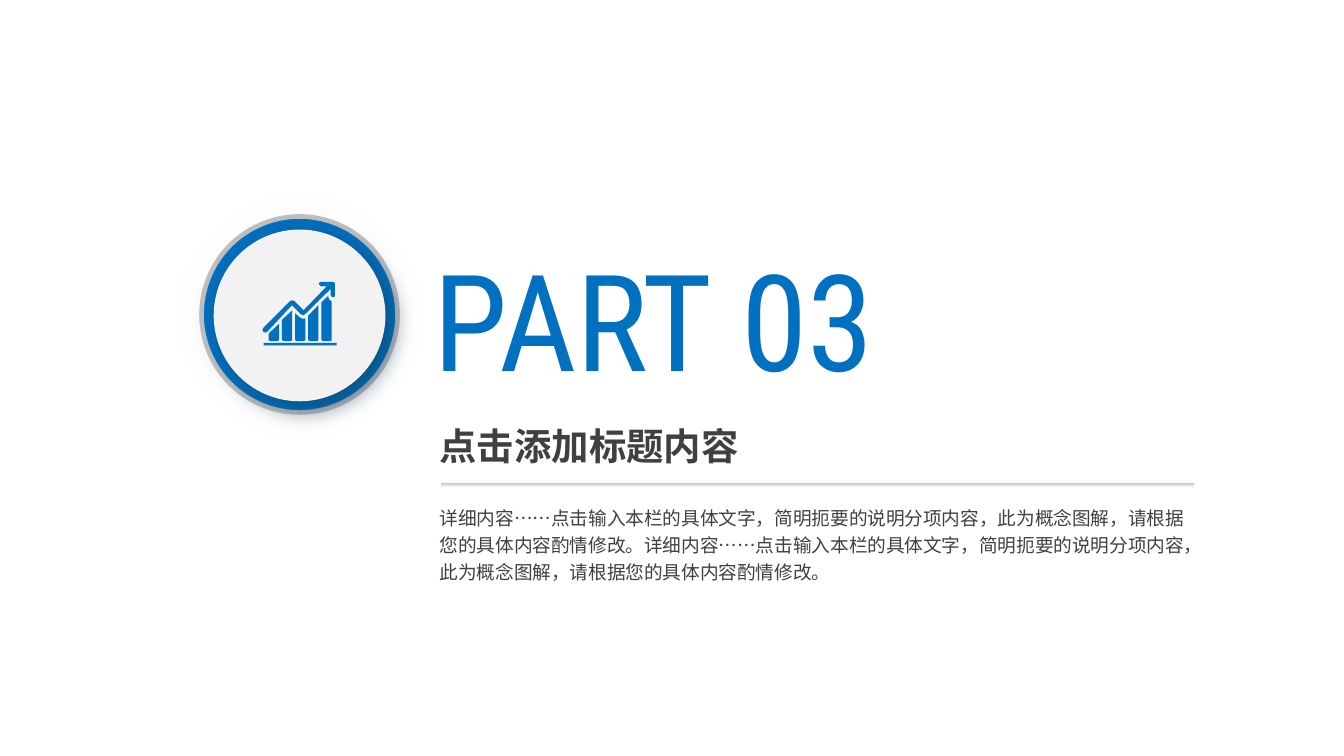
from dataclasses import dataclass

from lxml import etree
from pptx import Presentation
from pptx.dml.color import RGBColor
from pptx.enum import shapes, text
from pptx.oxml import ns
from pptx.util import Pt

COLORS = {
    "blue": "0070C0",
    "white": "FFFFFF",
    "silver": "BFBFBF",
    "pale": "F2F2F2",
    "ink": "404040",
    "shade": "134163",
}
CJK_FONT = "Noto Sans CJK SC"
BAR_PITCH, BAR_WIDTH, BAR_BASE, BAR_CORNER = 7.05, 5.5, 182.8, 0.7
BAR_LEFT = 144


@dataclass
class Preset:
    kind: int
    left: float
    top: float
    width: float
    height: float
    fill: tuple[str, ...]


@dataclass
class Caption:
    left: float
    top: float
    width: float
    height: float
    wording: str
    size: float
    font: str
    color: str
    bold: bool = False
    inset: tuple[float, float] = (5, 2.9)
    spacing: float = 1.0


def rgb(name: str) -> RGBColor:
    return RGBColor.from_string(COLORS[name])


def draw_preset(parent, item: Preset):
    shape = parent.add_shape(
        item.kind, Pt(item.left), Pt(item.top), Pt(item.width), Pt(item.height))
    if len(item.fill) == 1:
        shape.fill.solid()
        shape.fill.fore_color.rgb = rgb(item.fill[0])
    else:
        shape.fill.gradient()
        shape.fill.gradient_angle = 270
        for stop, name in zip(shape.fill.gradient_stops, item.fill):
            stop.color.rgb = rgb(name)
    shape.line.fill.background()
    shape.shadow.inherit = False
    return shape


def add_effect(shape, tag: str, **attributes: int):
    effects = shape._element.spPr.find(ns.qn("a:effectLst"))
    return etree.SubElement(
        effects, ns.qn(tag), {key: str(value) for key, value in attributes.items()})


def draw_outline(parent, points: list[tuple[float, float]]) -> None:
    scaled = [(x * 100, y * 100) for x, y in points]
    builder = parent.build_freeform(*scaled[0], scale=Pt(1) / 100)
    builder.add_line_segments(scaled[1:], close=True)
    outline = builder.convert_to_shape()
    outline.fill.solid()
    outline.fill.fore_color.rgb = rgb("blue")
    outline.line.fill.background()
    outline.shadow.inherit = False


def draw_bar(parent, index: int, crest: list[tuple[float, float]]) -> None:
    left = BAR_LEFT + index * BAR_PITCH
    right = left + BAR_WIDTH
    shoulder = BAR_BASE - BAR_CORNER
    draw_outline(parent, [(left + dx, y) for dx, y in crest] + [
        (right, shoulder), (right - BAR_CORNER, BAR_BASE),
        (left + BAR_CORNER, BAR_BASE), (left, shoulder)])


def draw_caption(parent, item: Caption) -> None:
    box = parent.add_textbox(
        Pt(item.left), Pt(item.top), Pt(item.width), Pt(item.height))
    frame = box.text_frame
    frame.text = item.wording
    frame.word_wrap = True
    frame.auto_size = text.MSO_AUTO_SIZE.SHAPE_TO_FIT_TEXT
    frame.margin_left = frame.margin_right = Pt(item.inset[0])
    frame.margin_top = frame.margin_bottom = Pt(item.inset[1])
    paragraph = frame.paragraphs[0]
    paragraph.line_spacing = item.spacing
    run = paragraph.runs[0]
    run.font.size = Pt(item.size)
    run.font.bold = item.bold
    run.font.name = item.font
    run.font.color.rgb = rgb(item.color)
    etree.SubElement(run.font._element, ns.qn("a:ea"), typeface=CJK_FONT)


def draw_badge(slide) -> None:
    badge = slide.shapes.add_group_shape().shapes
    oval = shapes.MSO_SHAPE.OVAL
    halo = draw_preset(badge, Preset(oval, 90, 98.6, 141, 141, ("white", "silver")))
    add_effect(halo, "a:softEdge", rad=Pt(20))
    ring = draw_preset(badge, Preset(oval, 108, 116, 105, 105, ("blue",)))
    ring.line.color.rgb = rgb("silver")
    ring.line.width = Pt(2.5)
    disc = draw_preset(badge, Preset(oval, 114.5, 123, 92, 92, ("pale",)))
    shadow = add_effect(disc, "a:outerShdw", blurRad=Pt(12), dist=Pt(5),
                        dir=45 * 60000, algn="tl", rotWithShape=0)
    tint = etree.SubElement(shadow, ns.qn("a:srgbClr"), val=COLORS["shade"])
    etree.SubElement(tint, ns.qn("a:alpha"), val="64000")


def draw_growth_icon(slide) -> None:
    icon = slide.shapes.add_group_shape().shapes
    draw_preset(icon, Preset(
        shapes.MSO_SHAPE.RECTANGLE, 141.2, 183.7, 39.2, 1.4, ("blue",)))
    crests = [
        [(0, 178.6), (BAR_WIDTH, 173.5)],
        [(0, 171.4), (BAR_WIDTH, 166.3)],
        [(0, 167.8), (2.4, 169.9), (4, 170.8), (BAR_WIDTH, 170.6)],
        [(0, 169.2), (BAR_WIDTH, 163.4)],
        [(0, 162), (3.6, 158.6), (4.2, 160.6), (BAR_WIDTH, 161.3)],
    ]
    for index, crest in enumerate(crests):
        draw_bar(icon, index, crest)
    draw_outline(icon, [
        (143.2, 177.8), (156.4, 163.6), (161.3, 168.4), (162.4, 169),
        (163.4, 168.4), (177.2, 154.8), (177.2, 158.4), (178, 159.2),
        (179.2, 159.2), (179.5, 158.4), (179.5, 152), (179, 151.2),
        (177.8, 151), (172, 151), (171, 151.5), (170.8, 152.3),
        (172, 153.5), (175, 153.5), (162.7, 166.2), (157.7, 161.3),
        (156.6, 160.9), (155.5, 161.3), (141.1, 175.7), (140.6, 176.8),
        (141.1, 177.8), (142.2, 178.2)])


def main() -> None:
    deck = Presentation()
    deck.slide_width, deck.slide_height = Pt(720), Pt(405)
    slide = deck.slides.add_slide(deck.slide_layouts[6])
    draw_badge(slide)
    divider = draw_preset(slide.shapes, Preset(
        shapes.MSO_SHAPE.ROUNDED_RECTANGLE, 236, 258.6, 404, 2.6,
        ("silver", "white")))
    divider.adjustments[0] = 0.5
    detail = "详细内容……点击输入本栏的具体文字，简明扼要的说明分项内容，此为概念图解，请根据您的具体内容酌情修改。"
    captions = [
        Caption(227.5, 124, 284, 93, "PART 03", 72, "Roboto Condensed", "blue"),
        Caption(228.4, 223.2, 196, 31.5, "点击添加标题内容", 20,
                "TeX Gyre Adventor", "ink", bold=True, inset=(7.2, 3.6)),
        Caption(230.6, 266.4, 410, 49, detail * 2, 10, CJK_FONT, "ink", spacing=1.2),
    ]
    for caption in captions:
        draw_caption(slide.shapes, caption)
    draw_growth_icon(slide)
    deck.save("out.pptx")


if __name__ == "__main__":
    main()
